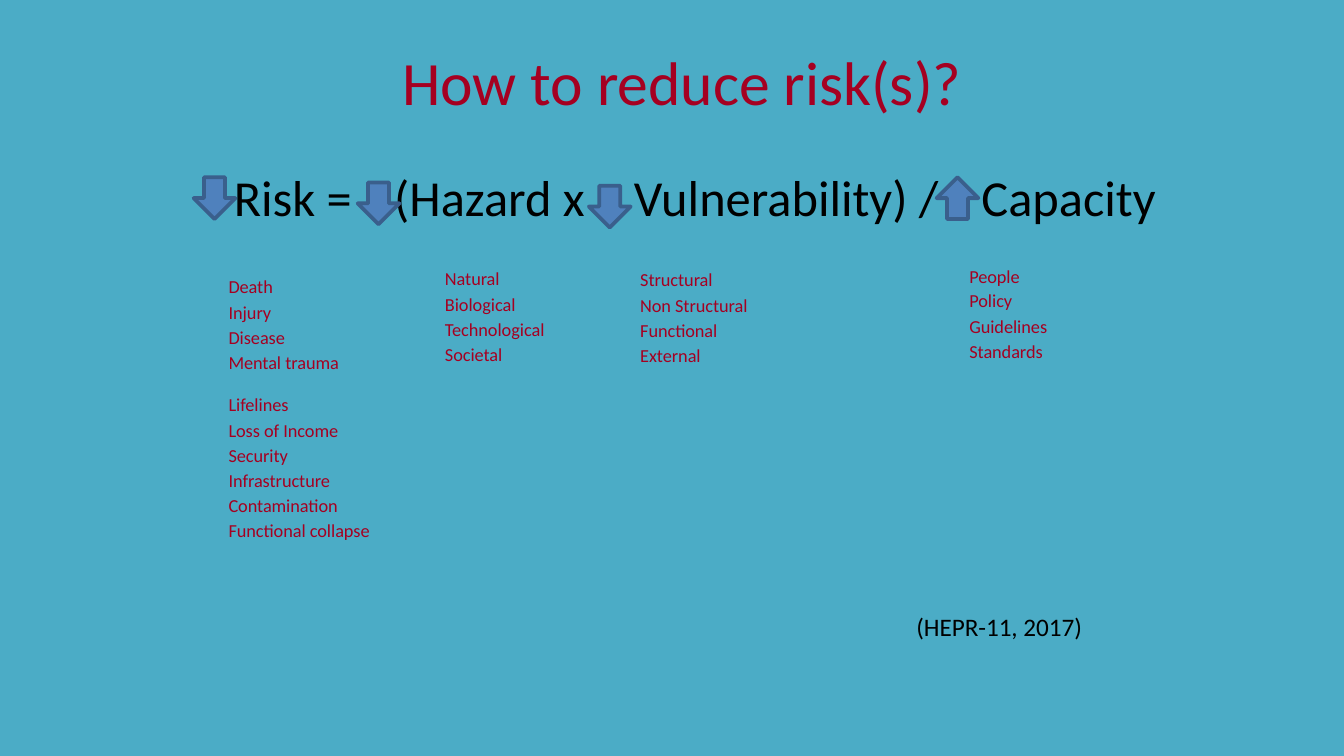
from pptx import Presentation
from pptx.dml.color import RGBColor
from pptx.enum.shapes import MSO_SHAPE as Preset
from pptx.enum.text import MSO_ANCHOR as Anchor, PP_ALIGN as Align
from pptx.oxml.ns import qn
from pptx.util import Cm, Pt
from lxml.etree import SubElement

TEAL = RGBColor(0x4B, 0xAC, 0xC6)
CRIMSON = RGBColor(0xA5, 0x00, 0x21)
BLACK = RGBColor(0x00, 0x00, 0x00)
BLUE = RGBColor(0x4F, 0x81, 0xBD)
DARK_BLUE = RGBColor(0x3A, 0x5F, 0x8C)

ARROW_SIZE = 0.79

# left, top, rotation
ARROWS = [
    (3.66, 3.35, 0),
    (6.76, 3.45, 0),
    (11.13, 3.51, 0),
    (17.7, 3.35, 180),
]

# left, top, width, number of tightly set lines, entries
FACTORS = [
    (4.29, 5.26, 2.8, 1, ["Death", "Injury", "Disease", "Mental trauma"]),
    (4.29, 7.49, 3.4, 1, ["Lifelines", "Loss of Income", "Security",
                          "Infrastructure", "Contamination",
                          "Functional collapse"]),
    (8.38, 5.11, 2.6, 1, ["Natural", "Biological", "Technological",
                          "Societal"]),
    (12.07, 5.13, 2.6, 1, ["Structural", "Non Structural", "Functional",
                           "External"]),
    (18.29, 5.08, 2.2, 2, ["People", "Policy", "Guidelines", "Standards"]),
]


class RiskSlide:
    font_name = "Calibri"

    def __init__(self, deck):
        self.slide = deck.slides.add_slide(deck.slide_layouts[5])
        fill = self.slide.background.fill
        fill.solid()
        fill.fore_color.rgb = TEAL

    def style(self, paragraph, size, color):
        for run in paragraph.runs:
            run.font.name = self.font_name
            run.font.size = Pt(size)
            run.font.color.rgb = color

    def title(self, text, left, top, width, height):
        heading = self.slide.shapes.title
        heading.left, heading.top = Cm(left), Cm(top)
        heading.width, heading.height = Cm(width), Cm(height)
        frame = heading.text_frame
        frame.text = text
        frame.vertical_anchor = Anchor.MIDDLE
        frame.paragraphs[0].alignment = Align.CENTER
        self.style(frame.paragraphs[0], 33, CRIMSON)

    def text(self, text, left, top, width, height, size, color):
        box = self.slide.shapes.add_textbox(
            Cm(left), Cm(top), Cm(width), Cm(height))
        frame = box.text_frame
        frame.word_wrap = True
        frame.text = text
        for paragraph in frame.paragraphs:
            self.style(paragraph, size, color)
        return frame

    def formula(self, terms, stops, left, top, width, height):
        """Set the terms on one line, each after the first at its tab stop."""
        frame = self.text("\t".join(terms), left, top, width, height,
                          27, BLACK)
        properties = frame.paragraphs[0]._p.get_or_add_pPr()
        tabs = SubElement(properties, qn("a:tabLst"))
        for stop in stops:
            SubElement(tabs, qn("a:tab"), pos=str(Cm(stop)), algn="l")

    def arrow(self, left, top, rotation):
        arrow = self.slide.shapes.add_shape(
            Preset.DOWN_ARROW, Cm(left), Cm(top),
            Cm(ARROW_SIZE), Cm(ARROW_SIZE))
        arrow.rotation = rotation
        arrow.shadow.inherit = False
        arrow.fill.solid()
        arrow.fill.fore_color.rgb = BLUE
        arrow.line.color.rgb = DARK_BLUE
        arrow.line.width = Pt(2)

    def factors(self, left, top, width, tight_lines, entries):
        """List the factors in slightly raised, reduced letters."""
        frame = self.text("\n".join(entries), left, top, width,
                          0.47 * len(entries), 16.9, CRIMSON)
        frame.margin_left = Cm(0.03)
        frame.margin_top = frame.margin_right = frame.margin_bottom = 0
        for index, paragraph in enumerate(frame.paragraphs):
            tight = index < tight_lines
            paragraph.line_spacing = Pt(12.2 if tight else 13.5)
            if tight:
                paragraph.space_before = Pt(0.6)
            for run in paragraph.runs:
                run._r.get_or_add_rPr().set(
                    "baseline", "4000" if tight else "2000")


def main():
    deck = Presentation()
    deck.slide_width, deck.slide_height = Cm(25.4), Cm(14.29)
    risk = RiskSlide(deck)
    risk.title("How to reduce risk(s)?", 6.3, 0.64, 13.18, 1.78)
    risk.formula(["Risk =", "(Hazard x", "Vulnerability) /", "Capacity"],
                 [3.03, 7.56, 14.13], 4.17, 3.02, 18.36, 1.42)
    for arrow in ARROWS:
        risk.arrow(*arrow)
    for group in FACTORS:
        risk.factors(*group)
    risk.text("(HEPR-11, 2017)", 17.07, 11.43, 3.94, 0.84, 13.5, BLACK)
    deck.save("out.pptx")


if __name__ == "__main__":
    main()
